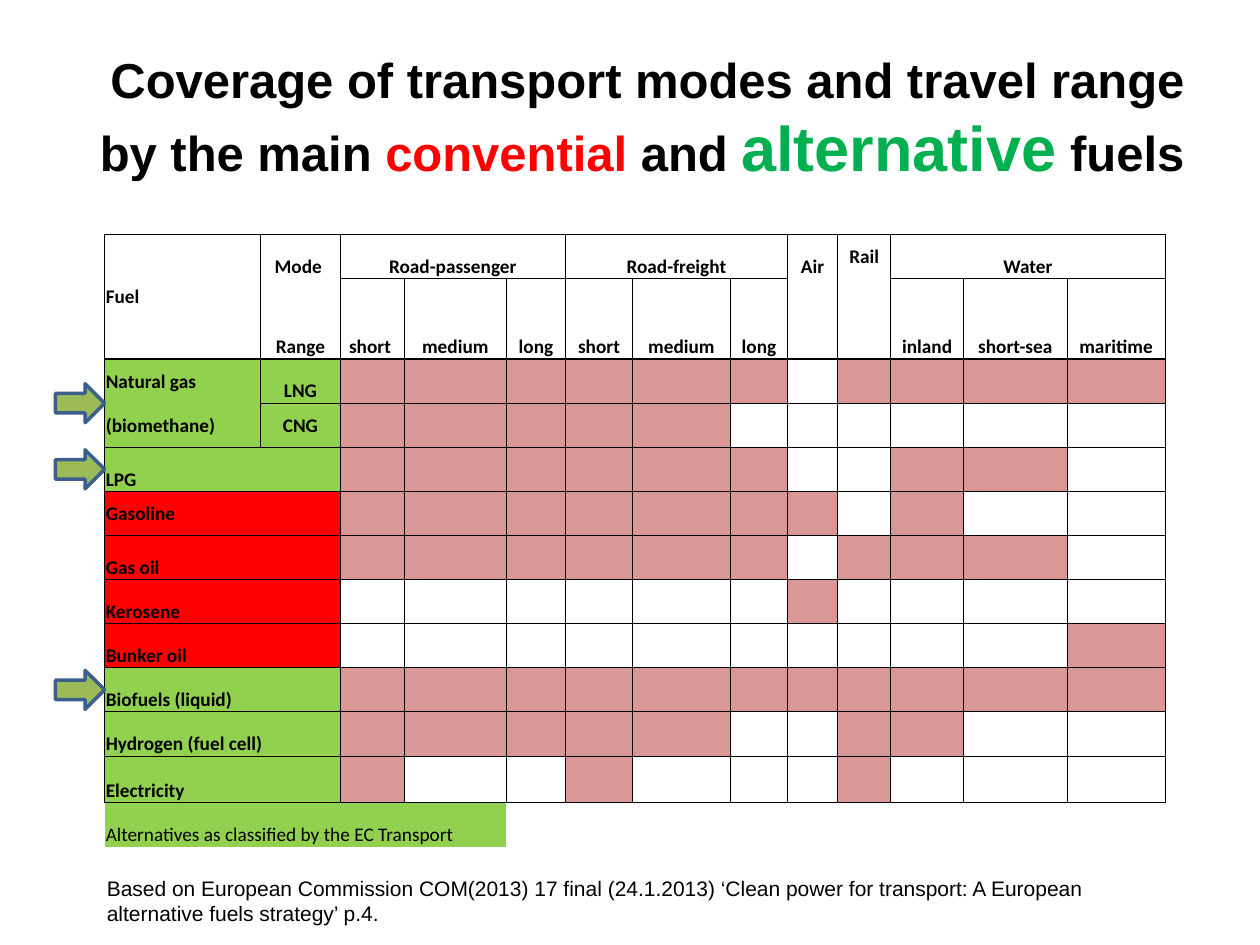
from lxml import etree
from pptx import Presentation
from pptx.dml.color import RGBColor
from pptx.enum.shapes import MSO_SHAPE
from pptx.enum.text import MSO_ANCHOR, MSO_AUTO_SIZE, PP_ALIGN
from pptx.oxml.ns import qn
from pptx.util import Inches, Pt

ARROW = MSO_SHAPE.RIGHT_ARROW
MIDDLE, BOTTOM = MSO_ANCHOR.MIDDLE, MSO_ANCHOR.BOTTOM
LEFT, CENTER, RIGHT = PP_ALIGN.LEFT, PP_ALIGN.CENTER, PP_ALIGN.RIGHT
NO_FIT, GROW = MSO_AUTO_SIZE.NONE, MSO_AUTO_SIZE.SHAPE_TO_FIT_TEXT

BLACK, WHITE, RED = "000000", "FFFFFF", "FF0000"
ALTERNATIVE, COVERED = "92D050", "D99795"

TITLE = [
    ("Coverage of transport modes and travel range by the main ", 28, BLACK),
    ("convential ", 28, RED),
    ("and ", 28, BLACK),
    ("alternative", 36, "00B050"),
    (" ", 28, RED),
    ("fuels", 28, BLACK),
]
SOURCE = ("Based on European Commission COM(2013) 17 final (24.1.2013) ‘Clean power "
          "for transport: A European alternative fuels strategy’ p.4.")
LEGEND = "Alternatives as classified by the EC Transport"

COLUMNS = [1.24, 0.63, 0.51, 0.81, 0.47, 0.53, 0.78, 0.45, 0.4, 0.42, 0.58, 0.82, 0.78]
ROWS = [0.35, 0.64] + [0.35] * 9 + [0.37, 0.35]
MODES = {0: "Fuel", 1: "Mode ", 2: "Road-passenger", 5: "Road-freight",
         8: "Air", 9: "Rail", 10: "Water"}
RANGES = {1: "Range", 2: "short ", 3: "medium", 4: "long", 5: "short", 6: "medium",
          7: "long", 10: "inland", 11: "short-sea", 12: "maritime"}
FUELS = [
    ("Natural gas", "LNG", ALTERNATIVE, "11111101111"),
    ("(biomethane)", "CNG", ALTERNATIVE, "11111000000"),
    ("LPG", "", ALTERNATIVE, "11111100110"),
    ("Gasoline", "", RED, "11111110100"),
    ("Gas oil", "", RED, "11111101110"),
    ("Kerosene", "", RED, "00000010000"),
    ("Bunker oil", "", RED, "00000000001"),
    ("Biofuels (liquid)", "", ALTERNATIVE, "11111111111"),
    ("Hydrogen (fuel cell)", "", ALTERNATIVE, "11111001100"),
    ("Electricity", "", ALTERNATIVE, "10010001000"),
]
HEADER_ROWS = 2
LEGEND_ROW = HEADER_ROWS + len(FUELS)
MIDDLE_TEXTS = {"Fuel", "Rail", "Natural gas", "(biomethane)", "CNG", "Gasoline"}
POINTED_ROWS = [(2, 4), (4, 5), (9, 10)]


def rgb(value):
    """Turn a hex string into a colour."""
    return RGBColor.from_string(value)


def style(run, size, color, face, bold=False):
    """Format one run."""
    run.font.size, run.font.bold, run.font.name = Pt(size), bold, face
    run.font.color.rgb = rgb(color)


def horizontal_rule(row, column):
    """Give the width of the line above a row."""
    if row > LEGEND_ROW or (row == 1 and column in (0, 1, 8, 9)) or (row, column) == (3, 0):
        return 0
    return 1 if row in (0, HEADER_ROWS, LEGEND_ROW) else 0.5


def vertical_rule(row, column):
    """Give the width of the line left of a column."""
    if row == LEGEND_ROW:
        return 0
    return 1 if column in (0, len(COLUMNS)) else 0.5


def draw_borders(cell, row, column):
    """Draw the four sides of a cell."""
    widths = {"a:lnL": vertical_rule(row, column), "a:lnR": vertical_rule(row, column + 1),
              "a:lnT": horizontal_rule(row, column), "a:lnB": horizontal_rule(row + 1, column)}
    properties = cell._tc.get_or_add_tcPr()
    for side, width in widths.items():
        line = etree.SubElement(properties, qn(side), w=str(int(Pt(width))))
        if width:
            ink = etree.SubElement(line, qn("a:solidFill"))
            etree.SubElement(ink, qn("a:srgbClr"), val=BLACK)
        else:
            etree.SubElement(line, qn("a:noFill"))


def write_cell(cell, label, align, bold=True):
    """Write and format a label in a cell."""
    cell.text_frame.text = label
    cell.vertical_anchor = MIDDLE if label in MIDDLE_TEXTS else BOTTOM
    paragraph = cell.text_frame.paragraphs[0]
    paragraph.alignment = align
    for run in paragraph.runs:
        style(run, 11, BLACK, "Calibri", bold)


def add_title(slide, left, top, width, height):
    """Place the title with its coloured words."""
    title = slide.shapes.title
    title.left, title.top, title.width, title.height = left, top, width, height
    title.text_frame.auto_size = NO_FIT
    title.text_frame.vertical_anchor = MIDDLE
    paragraph = title.text_frame.paragraphs[0]
    paragraph.alignment = RIGHT
    for words, size, color in TITLE:
        run = paragraph.add_run()
        run.text = words
        style(run, size, color, "Arial", True)


def add_coverage(slide, left, top):
    """Place the table of fuels against modes and ranges."""
    table = slide.shapes.add_table(len(ROWS), len(COLUMNS), left, top,
                                   Inches(sum(COLUMNS)), Inches(sum(ROWS))).table
    table.first_row = table.horz_banding = False
    for column, width in zip(table.columns, COLUMNS):
        column.width = Inches(width)
    for row, height in zip(table.rows, ROWS):
        row.height = Inches(height)
    for r in range(len(ROWS)):
        for c in range(len(COLUMNS)):
            cell = table.cell(r, c)
            cell.margin_left = cell.margin_right = cell.margin_top = Inches(0.01)
            cell.margin_bottom = 0
            draw_borders(cell, r, c)
            cell.fill.solid()
            cell.fill.fore_color.rgb = rgb(WHITE)
    for r, headings in enumerate((MODES, RANGES)):
        for c, heading in headings.items():
            write_cell(table.cell(r, c), heading, CENTER if c else LEFT)
    for r, (fuel, kind, color, coverage) in enumerate(FUELS, HEADER_ROWS):
        write_cell(table.cell(r, 0), fuel, LEFT)
        if kind:
            write_cell(table.cell(r, 1), kind, CENTER)
        else:
            table.cell(r, 0).merge(table.cell(r, 1))
        for c in (0, 1):
            table.cell(r, c).fill.fore_color.rgb = rgb(color)
        for c, mark in enumerate(coverage, 2):
            if mark == "1":
                table.cell(r, c).fill.fore_color.rgb = rgb(COVERED)
    legend = table.cell(LEGEND_ROW, 0)
    write_cell(legend, LEGEND, LEFT, False)
    legend.fill.fore_color.rgb = rgb(ALTERNATIVE)
    legend.merge(table.cell(LEGEND_ROW, 3))
    table.cell(0, 0).merge(table.cell(1, 0))
    for c in (2, 5, 10):
        table.cell(0, c).merge(table.cell(0, c + 2))


def add_pointers(slide, right, top):
    """Place an arrow at the left of each highlighted fuel."""
    width, height = Inches(0.39), Inches(0.31)
    for first, end in POINTED_ROWS:
        center = top + Inches((sum(ROWS[:first]) + sum(ROWS[:end])) / 2)
        pointer = slide.shapes.add_shape(ARROW, right - width, center - height // 2, width, height)
        pointer.shadow.inherit = False
        pointer.fill.solid()
        pointer.fill.fore_color.rgb = rgb("9BBB59")
        pointer.line.color.rgb = rgb("3A5F8C")
        pointer.line.width = Pt(2)


def add_source(slide, left, top, width, height):
    """Place the source note."""
    frame = slide.shapes.add_textbox(left, top, width, height).text_frame
    frame.word_wrap = True
    frame.auto_size = GROW
    frame.text = SOURCE
    style(frame.paragraphs[0].runs[0], 12, BLACK, "Arial")


def main():
    """Build and save the slide."""
    deck = Presentation()
    deck.slide_width, deck.slide_height = Inches(10), Inches(7.5)
    wide, high = deck.slide_width, deck.slide_height
    slide = deck.slides.add_slide(deck.slide_layouts[5])
    table_left, table_top = Inches(0.83), Inches(1.86)
    add_title(slide, int(wide * 0.05), int(high * 0.04), int(wide * 0.9), high // 6)
    add_coverage(slide, table_left, table_top)
    add_source(slide, int(wide * 0.075), int(high * 0.92), int(wide * 0.85), high // 15)
    add_pointers(slide, table_left, table_top)
    deck.save("out.pptx")


if __name__ == "__main__":
    main()
